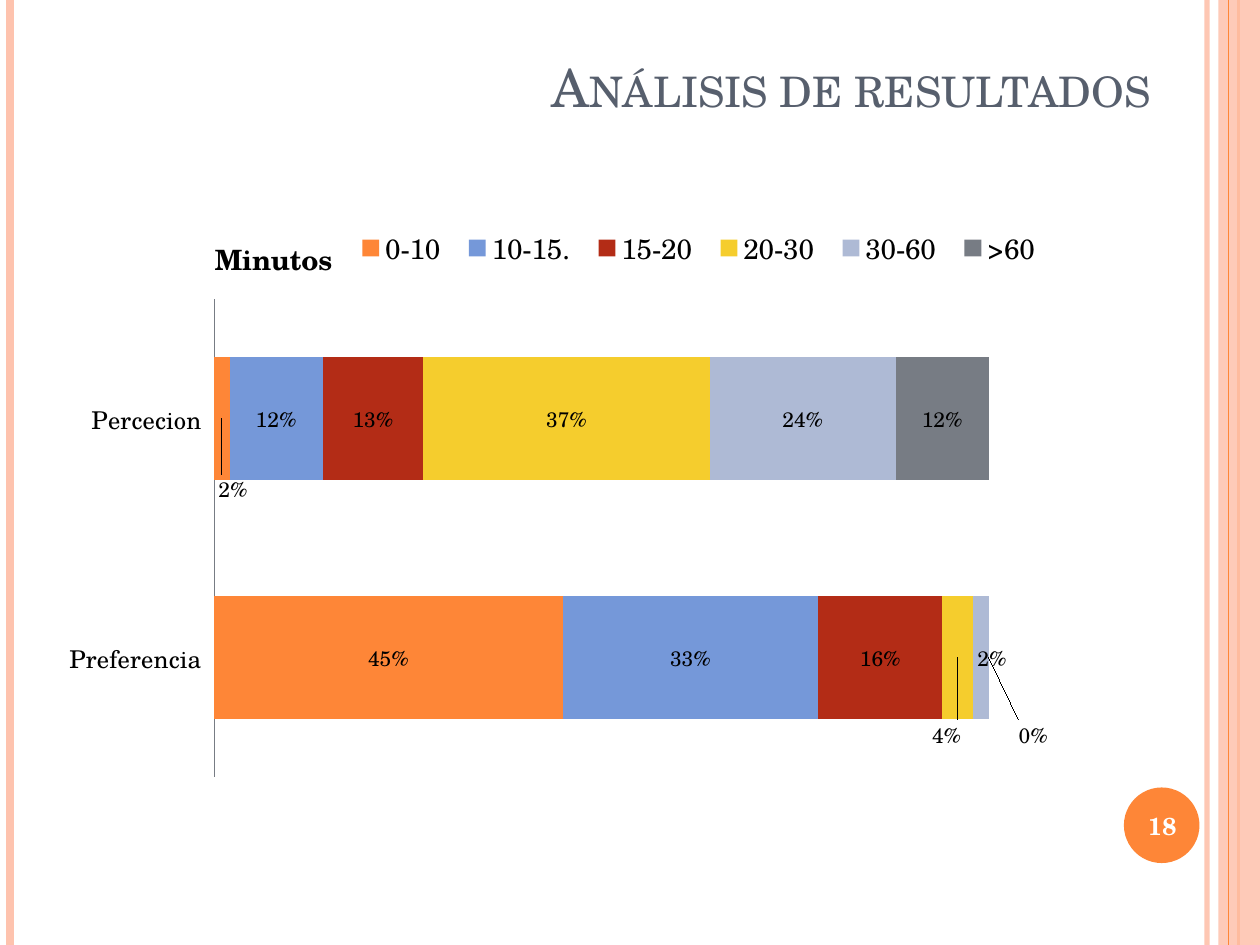
from lxml import etree
from pptx import Presentation
from pptx.chart.data import CategoryChartData
from pptx.dml.color import RGBColor
from pptx.enum.chart import (XL_CHART_TYPE, XL_LABEL_POSITION, XL_LEGEND_POSITION,
                             XL_TICK_LABEL_POSITION, XL_TICK_MARK)
from pptx.enum.shapes import MSO_CONNECTOR, MSO_SHAPE
from pptx.enum.text import MSO_ANCHOR, PP_ALIGN
from pptx.oxml.ns import qn
from pptx.util import Inches, Pt

STACKED = XL_CHART_TYPE.BAR_STACKED
CENTER_LABEL = XL_LABEL_POSITION.CENTER
LEGEND_TOP = XL_LEGEND_POSITION.TOP
LABELS_LOW = XL_TICK_LABEL_POSITION.LOW
NO_TICK = XL_TICK_MARK.NONE
STRAIGHT = MSO_CONNECTOR.STRAIGHT
RECTANGLE, OVAL = MSO_SHAPE.RECTANGLE, MSO_SHAPE.OVAL
BOTTOM, MIDDLE = MSO_ANCHOR.BOTTOM, MSO_ANCHOR.MIDDLE
RIGHT, CENTER = PP_ALIGN.RIGHT, PP_ALIGN.CENTER

FONT = "TeX Gyre Schola"
WIDTH, HEIGHT = 10, 7.5
PEACH = RGBColor(0xFE, 0xC3, 0xAE)
ORANGE = RGBColor(0xFE, 0x86, 0x37)
SLATE = RGBColor(0x57, 0x5F, 0x6D)
BLUE = RGBColor(0x75, 0x98, 0xD9)
RED = RGBColor(0xB3, 0x2C, 0x16)
YELLOW = RGBColor(0xF5, 0xCD, 0x2D)
LAVENDER = RGBColor(0xAE, 0xBA, 0xD5)
GRAY = RGBColor(0x77, 0x7C, 0x84)
WHITE = RGBColor(0xFF, 0xFF, 0xFF)
BLACK = RGBColor(0, 0, 0)

# x, colour, width in points, opacity in percent
STRIPES = [(9.58, PEACH, 3, 93), (0.08, PEACH, 4.5, 100), (9.83, ORANGE, 1.5, 100)]
THIN_STRIPE = (9.75, ORANGE, 0.75, 100)

CATEGORIES = ["Preferencia", "Percecion"]
# name, values, colour, moved labels as {point: (dx, dy)} in shares of the chart
SERIES = [
    ("0-10", (0.45, 0.02), ORANGE, {1: (0.01, 0.11)}),
    ("10-15.", (0.33, 0.12), BLUE, {}),
    ("15-20", (0.16, 0.13), RED, {}),
    ("20-30", (0.04, 0.37), YELLOW, {0: (-0.01, 0.12)}),
    ("30-60", (0.02, 0.24), LAVENDER, {0: (0.01, 0)}),
    (">60", (0, 0.12), GRAY, {0: (0.04, 0.12)}),
]


def format_font(font, size, color=BLACK, bold=False):
    values = {"name": FONT, "size": Pt(size), "bold": bold}
    for name, value in values.items():
        setattr(font, name, value)
    font.color.rgb = color


def set_opacity(fill_parent, percent):
    color = fill_parent.find(".//" + qn("a:srgbClr"))
    etree.SubElement(color, qn("a:alpha")).set("val", str(percent * 1000))


def add_stripe(slide, x, color, width, opacity):
    """Draw a vertical line over the full slide height."""
    line = slide.shapes.add_connector(STRAIGHT, Inches(x), 0, Inches(x), Inches(HEIGHT))
    line.line.color.rgb = color
    line.line.width = Pt(width)
    properties = line._element.spPr
    if opacity < 100:
        set_opacity(properties, opacity)
    etree.SubElement(properties, qn("a:effectLst"))


def add_filled(slide, kind, box, color):
    shape = slide.shapes.add_shape(kind, *map(Inches, box))
    shape.shadow.inherit = False
    shape.fill.solid()
    shape.fill.fore_color.rgb = color
    shape.line.fill.background()
    return shape


def add_text(slide, box, text, anchor, align, **font_values):
    frame = slide.shapes.add_textbox(*map(Inches, box)).text_frame
    frame.word_wrap = True
    frame.vertical_anchor = anchor
    paragraph = frame.paragraphs[0]
    paragraph.alignment = align
    run = paragraph.add_run()
    run.text = text
    format_font(run.font, **font_values)
    return run


def set_layout(parent, index, target=None, modes=("xMode", "yMode"), **shares):
    """Give a chart part a manual layout, as the child at the index."""
    for old in parent.findall(qn("c:layout")):
        parent.remove(old)
    layout = etree.Element(qn("c:layout"))
    manual = etree.SubElement(layout, qn("c:manualLayout"))
    values = {"layoutTarget": target} if target else {}
    values.update({mode: "edge" for mode in modes})
    values.update(shares)
    for name, value in values.items():
        etree.SubElement(manual, qn("c:" + name)).set("val", str(value))
    parent.insert(index, layout)


def format_series(series, color, moved_labels):
    series.format.fill.solid()
    series.format.fill.fore_color.rgb = color
    labels = series.data_labels
    values = {"show_value": True, "number_format": "0%",
              "number_format_is_linked": False, "position": CENTER_LABEL}
    for name, value in values.items():
        setattr(labels, name, value)
    format_font(labels.font, 12)
    for point, (dx, dy) in moved_labels.items():
        label = series.points[point].data_label
        format_font(label.font, 12)
        label.position = CENTER_LABEL
        set_layout(label._get_or_add_dLbl(), 1, modes=(), x=dx, y=dy)


def format_axes(chart):
    axis = chart.category_axis
    axis.major_tick_mark = NO_TICK
    axis.tick_label_position = LABELS_LOW
    axis.format.line.color.rgb = GRAY
    format_font(axis.tick_labels.font, 14)
    values = {"minimum_scale": 0, "maximum_scale": 1,
              "has_major_gridlines": False, "visible": False}
    for name, value in values.items():
        setattr(chart.value_axis, name, value)


def add_minutes_chart(slide, box):
    data = CategoryChartData(number_format="0%")
    data.categories = CATEGORIES
    for name, values, _, _ in SERIES:
        data.add_series(name, values)
    chart = slide.shapes.add_chart(STACKED, *map(Inches, box), data).chart
    format_font(chart.font, 12)

    plot = chart.plots[0]
    plot.gap_width, plot.overlap = 95, 100
    plot.vary_by_categories = False
    for series, (_, _, color, moved_labels) in zip(plot.series, SERIES):
        format_series(series, color, moved_labels)
    format_axes(chart)

    title = chart.chart_title
    title.text_frame.text = "Minutos"
    format_font(title.text_frame.paragraphs[0].runs[0].font, 16, bold=True)
    set_layout(title._element, 1, x=0.14, y=0.13)

    chart.has_legend = True
    legend = chart.legend
    legend.position = LEGEND_TOP
    legend.include_in_layout = False
    format_font(legend.font, 16)
    set_layout(legend._element, 1, x=0.26, y=0.11, w=0.64, h=0.1)

    plot_area = chart._chartSpace.chart.plotArea
    set_layout(plot_area, 0, target="inner", x=0.144, y=0.239, w=0.697, h=0.741)


def main():
    presentation = Presentation()
    presentation.slide_width = Inches(WIDTH)
    presentation.slide_height = Inches(HEIGHT)
    slide = presentation.slides.add_slide(presentation.slide_layouts[6])

    for stripe in STRIPES:
        add_stripe(slide, *stripe)
    band = add_filled(slide, RECTANGLE, (9.67, 0, 0.33, HEIGHT), PEACH)
    set_opacity(band._element.spPr, 87)
    add_stripe(slide, *THIN_STRIPE)
    add_filled(slide, OVAL, (8.92, 6.25, 0.6, 0.6), ORANGE)

    title = add_text(slide, (1.06, 0.22, 8.17, 0.77), "Análisis de resultados",
                     BOTTOM, RIGHT, size=30, color=SLATE)
    title.font._element.set("cap", "small")
    add_text(slide, (8.89, 6.27, 0.67, 0.57), "18", MIDDLE, CENTER,
             size=14, color=WHITE, bold=True)
    add_minutes_chart(slide, (0.43, 1.15, 8.82, 5.12))
    presentation.save("out.pptx")


if __name__ == "__main__":
    main()
